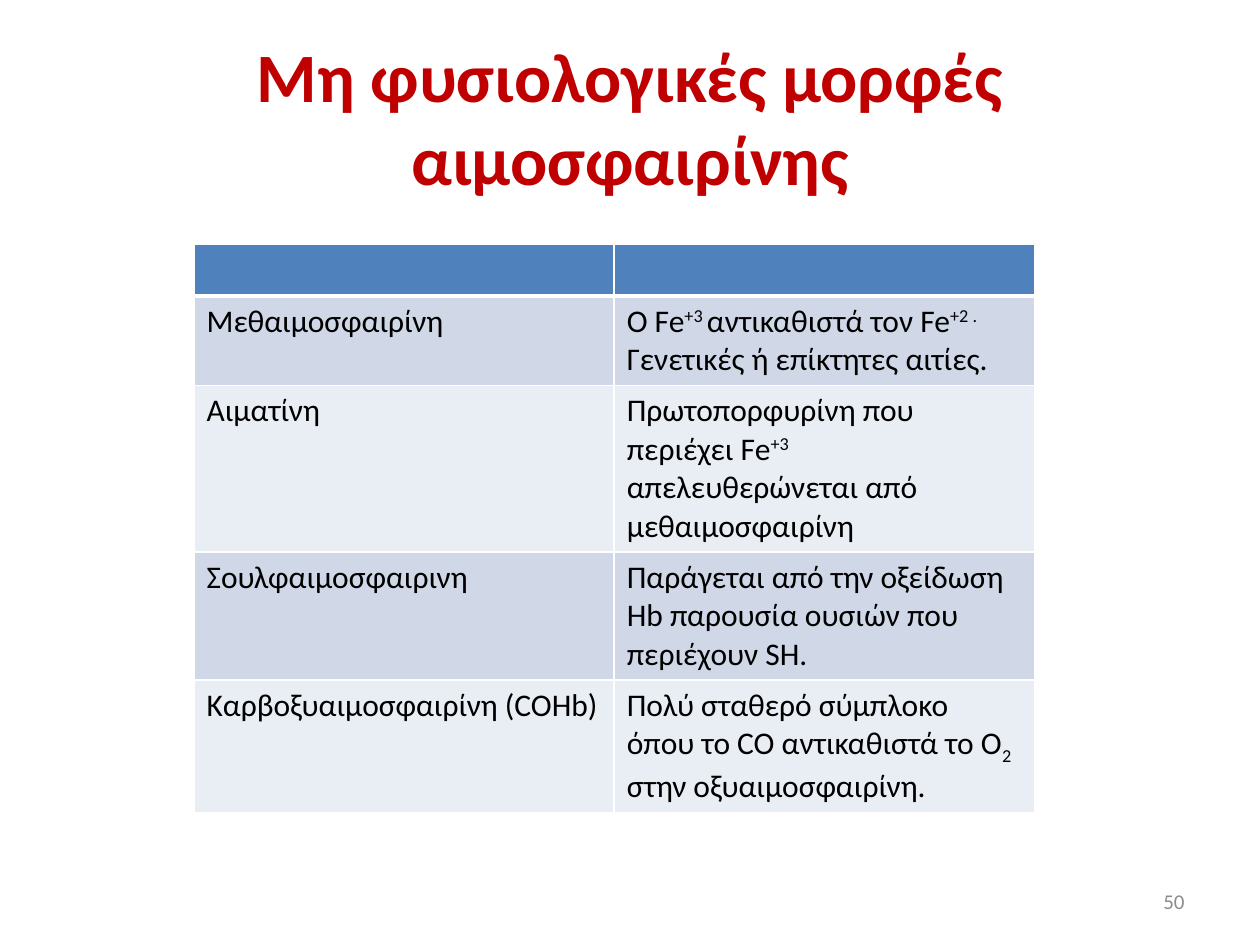
from lxml import etree
from pptx import Presentation
from pptx.dml.color import RGBColor
from pptx.enum.text import MSO_ANCHOR, MSO_AUTO_SIZE, PP_ALIGN
from pptx.oxml.ns import qn
from pptx.util import Inches, Pt

CENTER, RIGHT = PP_ALIGN.CENTER, PP_ALIGN.RIGHT
MIDDLE = MSO_ANCHOR.MIDDLE
NO_FIT = MSO_AUTO_SIZE.NONE

RED = RGBColor(0xC0, 0x00, 0x00)
GREY = RGBColor(0x8C, 0x8C, 0x8C)
BLACK = RGBColor(0x00, 0x00, 0x00)
WHITE = RGBColor(0xFF, 0xFF, 0xFF)
HEADER = RGBColor(0x4F, 0x81, 0xBD)
BANDS = [RGBColor(0xE9, 0xED, 0xF4), RGBColor(0xD0, 0xD8, 0xE8)]

FONT = "Calibri"
SUPER, SUB = 30000, -25000

# Each cell is a list of (text, baseline shift) runs
ROWS = [
    [[], []],
    [[("Μεθαιμοσφαιρίνη", 0)],
     [("O Fe", 0), ("+3 ", SUPER), ("αντικαθιστά τον Fe", 0),
      ("+2 . ", SUPER), ("Γενετικές ή επίκτητες αιτίες.", 0)]],
    [[("Αιματίνη", 0)],
     [("Πρωτοπορφυρίνη που περιέχει Fe", 0), ("+3 ", SUPER),
      ("απελευθερώνεται από μεθαιμοσφαιρίνη", 0)]],
    [[("Σουλφαιμοσφαιρινη", 0)],
     [("Παράγεται από την οξείδωση Hb παρουσία ουσιών που περιέχουν SH.", 0)]],
    [[("Καρβοξυαιμοσφαιρίνη (COHb)", 0)],
     [("Πολύ σταθερό σύμπλοκο όπου το CO αντικαθιστά το O", 0), ("2 ", SUB),
      ("στην οξυαιμοσφαιρίνη.", 0)]],
]


def add_run(p, text, size, color, bold=False, baseline=0):
    r = p.add_run()
    r.text = text
    r.font.name = FONT
    r.font.size = Pt(size)
    r.font.bold = bold
    r.font.color.rgb = color
    if baseline:
        r.font._element.set("baseline", str(baseline))


def set_borders(cell, bottom):
    tcPr = cell._tc.get_or_add_tcPr()
    widths = [("a:lnL", 1), ("a:lnR", 1), ("a:lnT", 1), ("a:lnB", bottom)]
    for i, (tag, width) in enumerate(widths):
        ln = etree.Element(qn(tag), w=str(Pt(width)))
        fill = etree.SubElement(ln, qn("a:solidFill"))
        etree.SubElement(fill, qn("a:srgbClr"), val=str(WHITE))
        tcPr.insert(i, ln)


prs = Presentation()
prs.slide_width, prs.slide_height = Inches(10), Inches(7.5)
s = prs.slides.add_slide(prs.slide_layouts[5])

# Title
title = s.shapes.title
title.left, title.top = Inches(0.5), Inches(0.3)
title.width, title.height = Inches(9), Inches(1.25)
tf = title.text_frame
tf.auto_size = NO_FIT
tf.vertical_anchor = MIDDLE
p = tf.paragraphs[0]
p.alignment = CENTER
add_run(p, "Mη φυσιολογικές μορφές αιμοσφαιρίνης", 39.6, RED, bold=True)

# Table of haemoglobin forms
row_height = 0.41
frame = s.shapes.add_table(len(ROWS), 2, Inches(1.54), Inches(1.94),
                           Inches(6.67), Inches(row_height * len(ROWS)))
table = frame.table
for i, row in enumerate(ROWS):
    table.rows[i].height = Inches(row_height)
    for j, runs in enumerate(row):
        cell = table.cell(i, j)
        cell.fill.solid()
        cell.fill.fore_color.rgb = BANDS[i % 2] if i else HEADER
        set_borders(cell, bottom=1 if i else 3)
        for text, baseline in runs:
            add_run(cell.text_frame.paragraphs[0], text, 18, BLACK,
                    baseline=baseline)

# Slide number
number = s.shapes.add_textbox(Inches(7.17), Inches(6.95),
                              Inches(2.33), Inches(0.4))
tf = number.text_frame
tf.word_wrap = True
tf.vertical_anchor = MIDDLE
p = tf.paragraphs[0]
p.alignment = RIGHT
add_run(p, "50", 12, GREY)

prs.save("out.pptx")
